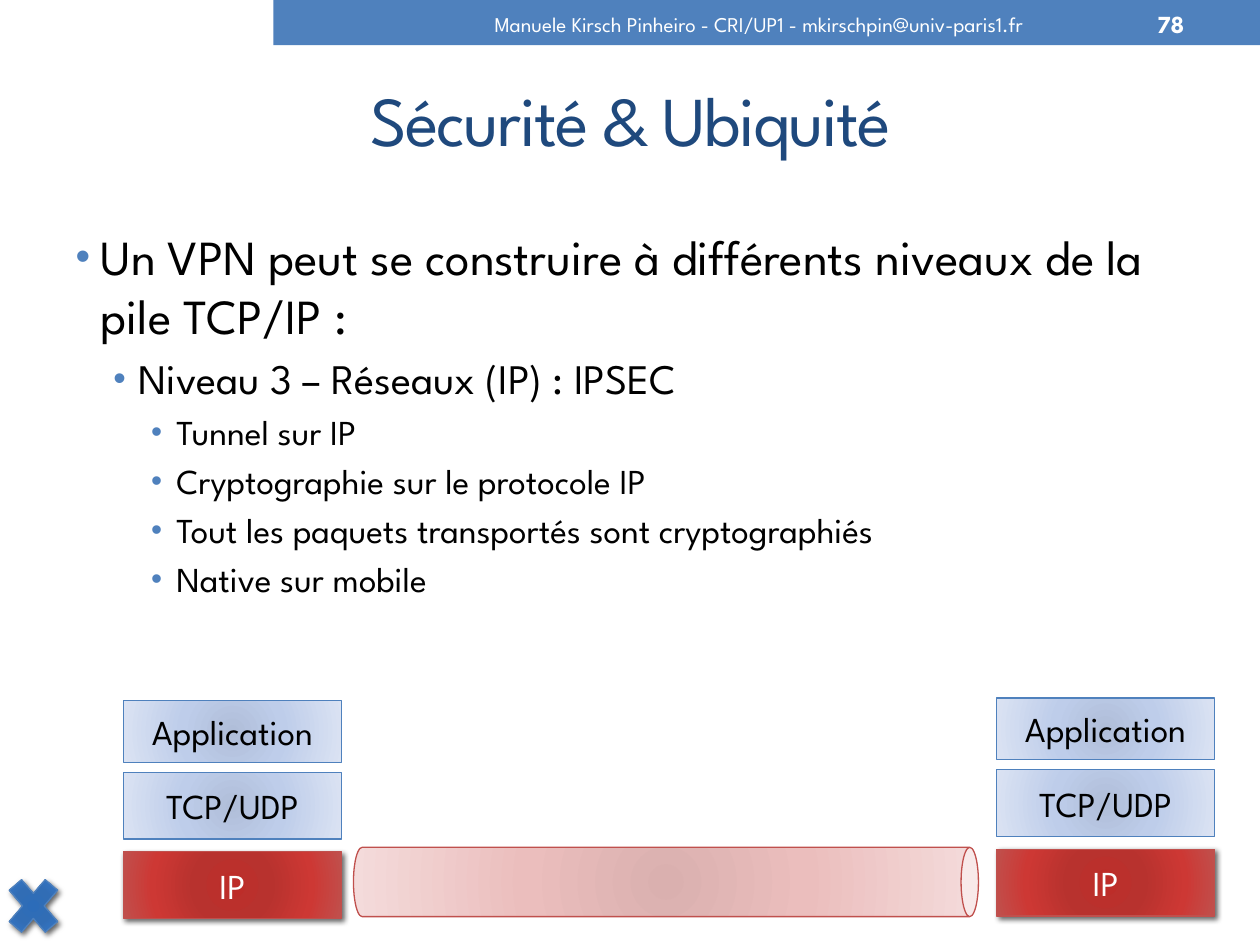
from lxml.etree import SubElement
from pptx import Presentation
from pptx.dml.color import RGBColor
from pptx.enum.shapes import MSO_SHAPE
from pptx.enum.text import MSO_ANCHOR, MSO_AUTO_SIZE, PP_ALIGN
from pptx.oxml import parse_xml
from pptx.oxml.ns import nsdecls, qn
from pptx.util import Inches, Pt

FONT = "League Spartan"
BLUE = RGBColor(0x4F, 0x81, 0xBD)
NAVY = RGBColor(0x1F, 0x49, 0x7D)
RED = RGBColor(0xC0, 0x50, 0x4D)
BLACK = RGBColor(0, 0, 0)
WHITE = RGBColor(0xFF, 0xFF, 0xFF)

PALE = [(0, RGBColor(0xB0, 0xBE, 0xD9)), (45, RGBColor(0xBE, 0xCD, 0xEA)),
        (100, RGBColor(0xDB, 0xE3, 0xF3))]
ROSE = [(0, RGBColor(0xDA, 0xB0, 0xAF)), (45, RGBColor(0xEB, 0xBE, 0xBD)),
        (100, RGBColor(0xF4, 0xDB, 0xDB))]
DARK = [(0, RGBColor(0xBD, 0x2D, 0x29)), (34, RGBColor(0xB8, 0x32, 0x2E)),
        (70, RGBColor(0xCD, 0x38, 0x34)), (100, RED)]
DEEP = [(0, RGBColor(0x2C, 0x6C, 0xB9)), (34, RGBColor(0x31, 0x6D, 0xB5)),
        (70, RGBColor(0x36, 0x79, 0xCA)), (100, BLUE)]

POINTS = [
    (0, "Un VPN peut se construire à différents niveaux de la pile TCP/IP :"),
    (1, "Niveau 3 – Réseaux (IP) : IPSEC"),
    (2, "Tunnel sur IP"),
    (2, "Cryptographie sur le protocole IP"),
    (2, "Tout les paquets transportés sont cryptographiés"),
    (2, "Native sur mobile"),
]
LEVELS = [(28, 0.2, 85), (24, 0.5, 85), (20, 0.8, 90)]
LAYERS = [("Application", 0, 0.49, PALE, BLUE, BLACK),
          ("TCP/UDP", 0.57, 0.53, PALE, BLUE, BLACK),
          ("IP", 1.2, 0.53, DARK, RED, WHITE)]


def place(shape, x, y, w, h):
    shape.left, shape.top = Inches(x), Inches(y)
    shape.width, shape.height = Inches(w), Inches(h)


def style(para, size, color, bold=False):
    for run in para.runs:
        run.font.name = FONT
        run.font.size = Pt(size)
        run.font.bold = bold
        run.font.color.rgb = color


def write(shape, text, size, color, align=PP_ALIGN.CENTER, bold=False):
    frame = shape.text_frame
    frame.text = text
    frame.word_wrap = True
    frame.auto_size = MSO_AUTO_SIZE.NONE
    frame.vertical_anchor = MSO_ANCHOR.MIDDLE
    para = frame.paragraphs[0]
    para.alignment = align
    style(para, size, color, bold)


def add_label(slide, box, *text):
    label = slide.shapes.add_textbox(*map(Inches, box))
    write(label, *text)


def add_title(slide, text):
    title = slide.shapes.title
    place(title, 0.51, 0.44, 8.99, 1)
    write(title, text, 40, NAVY)
    run = title.text_frame.paragraphs[0].runs[0]
    run.font._element.set("spc", "-100")


def add_bullet(para, indent, scale):
    props = para._p.get_or_add_pPr()
    props.set("marL", str(Inches(indent)))
    props.set("indent", str(Inches(-0.2)))
    color = SubElement(props, qn("a:buClr"))
    SubElement(color, qn("a:srgbClr"), val=str(BLUE))
    SubElement(props, qn("a:buSzPct"), val=str(scale * 1000))
    SubElement(props, qn("a:buFont"), typeface="Arial")
    SubElement(props, qn("a:buChar"), char="•")


def add_list(slide):
    body = slide.placeholders[1]
    place(body, 0.5, 1.75, 9, 5.33)
    frame = body.text_frame
    frame.auto_size = MSO_AUTO_SIZE.NONE
    frame.text = "\n".join(text for _, text in POINTS)
    for para, (level, _) in zip(frame.paragraphs, POINTS):
        size, indent, scale = LEVELS[level]
        para.level = level
        add_bullet(para, indent, scale)
        style(para, size, BLACK)
    frame.paragraphs[0].space_before = Pt(0)


def add_blend(shape, stops):
    marks = "".join(
        f'<a:gs pos="{pos * 1000}"><a:srgbClr val="{color}"/></a:gs>'
        for pos, color in stops)
    fill = parse_xml(
        f'<a:gradFill {nsdecls("a")} rotWithShape="1"><a:gsLst>{marks}</a:gsLst>'
        '<a:path path="circle"><a:fillToRect l="100000" t="100000" '
        'r="100000" b="100000"/></a:path></a:gradFill>')
    shape._element.spPr.find(qn("a:prstGeom")).addnext(fill)


def add_shade(shape):
    effects = shape._element.spPr.find(qn("a:effectLst"))
    shade = SubElement(effects, qn("a:outerShdw"), blurRad=str(Pt(3)),
                       dist=str(Pt(2)), dir="2700000", algn="tl", rotWithShape="0")
    color = SubElement(shade, qn("a:srgbClr"), val=str(BLACK))
    SubElement(color, qn("a:alpha"), val="60000")


def add_block(slide, kind, box, stops, edge, shade=False):
    shape = slide.shapes.add_shape(kind, *map(Inches, box))
    add_blend(shape, stops)
    shape.line.color.rgb = edge
    shape.line.width = Pt(0.75)
    shape.shadow.inherit = False
    if shade:
        add_shade(shape)
    return shape


def add_stack(slide, x, y):
    for text, drop, height, stops, edge, color in LAYERS:
        layer = add_block(slide, MSO_SHAPE.RECTANGLE, (x, y + drop, 1.73, height),
                          stops, edge, stops is DARK)
        frame = layer.text_frame
        frame.margin_left = frame.margin_right = 0
        write(layer, text, 20, color)


def add_band(slide):
    band = slide.shapes.add_shape(
        MSO_SHAPE.RECTANGLE, *map(Inches, (2.17, 0, 7.83, 0.36)))
    band.fill.solid()
    band.fill.fore_color.rgb = BLUE
    band.line.fill.background()
    band.shadow.inherit = False


def main():
    deck = Presentation()
    deck.slide_width, deck.slide_height = Inches(10), Inches(7.5)
    slide = deck.slides.add_slide(deck.slide_layouts[1])
    add_band(slide)
    add_title(slide, "Sécurité & Ubiquité")
    add_list(slide)
    add_label(slide, (8.94, 0.02, 0.56, 0.34), "78", 14, WHITE,
              PP_ALIGN.RIGHT, True)
    add_stack(slide, 0.98, 5.56)
    tunnel = add_block(slide, MSO_SHAPE.CAN, (5.01, 4.52, 0.55, 4.96), ROSE, RED)
    tunnel.rotation = 90
    add_label(slide, (3.19, 0.02, 5.67, 0.34),
              "Manuele Kirsch Pinheiro - CRI/UP1 - mkirschpin@univ-paris1.fr",
              12, WHITE)
    add_stack(slide, 7.91, 5.54)
    add_block(slide, MSO_SHAPE.MATH_MULTIPLY, (-0.01, 6.87, 0.55, 0.64),
              DEEP, BLUE, True)
    deck.save("out.pptx")


if __name__ == "__main__":
    main()
